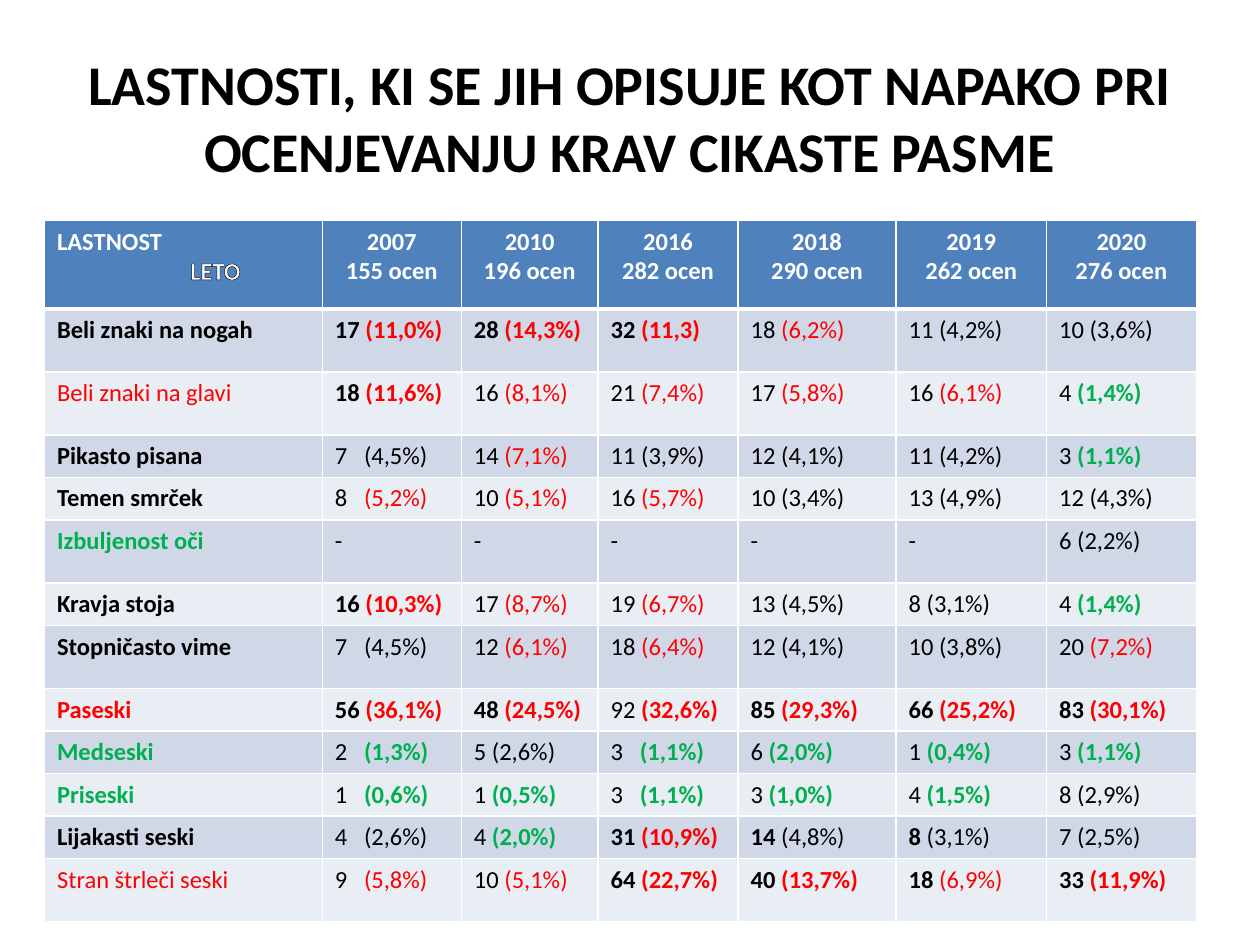
from lxml import etree
from pptx import Presentation
from pptx import util as u
from pptx.dml.color import RGBColor
from pptx.enum import text
from pptx.oxml import ns

Pt = u.Pt

WHITE = RGBColor(0xFF, 0xFF, 0xFF)
BLACK = RGBColor(0x00, 0x00, 0x00)
RED = RGBColor(0xFF, 0x00, 0x00)
GREEN = RGBColor(0x00, 0xB0, 0x50)
HEADER = RGBColor(0x4F, 0x81, 0xBD)
BANDS = (RGBColor(0xD0, 0xD8, 0xE8), RGBColor(0xE9, 0xED, 0xF4))

# First letter of a run: k black, r red, g green; a capital is bold
COLOURS = {"k": BLACK, "r": RED, "g": GREEN}

TITLE = "LASTNOSTI, KI SE JIH OPISUJE KOT NAPAKO PRI OCENJEVANJU KRAV CIKASTE PASME"
YEARS = {2007: 155, 2010: 196, 2016: 282, 2018: 290, 2019: 262, 2020: 276}
COLUMN_WIDTHS = (158.8, 79.4, 78.2, 80, 90.3, 86, 85.6)
HEADER_HEIGHT, TALL, SHORT = 50.5, 36, 24.3
COUNT_TAB = 16.6
LETO_INDENT = 76

TRAITS = [
    (TALL, ["KBeli znaki na nogah", "K17 |R(11,0%)", "K28 |R(14,3%)", "K32 |R(11,3)",
            "k18 |r(6,2%)", "k11 (4,2%)", "k10 (3,6%)"]),
    (TALL, ["rBeli znaki na glavi", "K18 |R(11,6%)", "k16 |r(8,1%)", "k21 |r(7,4%)",
            "k17 |r(5,8%)", "k16 |r(6,1%)", "k4|G (1,4%)"]),
    (SHORT, ["KPikasto pisana", "k7\t(4,5%)", "k14 |r(7,1%)", "k11 (3,9%)",
             "k12 (4,1%)", "k11 (4,2%)", "k3|G (1,1%)"]),
    (SHORT, ["KTemen smrček", "k8\t|r(5,2%)", "k10 |r(5,1%)", "k16 |r(5,7%)",
             "k10 (3,4%)", "k13 (4,9%)", "k12 (4,3%)"]),
    (TALL, ["GIzbuljenost oči", *["k-"] * 5, "k6 (2,2%)"]),
    (SHORT, ["KKravja stoja", "K16 |R(10,3%)", "k17 |r(8,7%)", "k19 |r(6,7%)",
             "k13 (4,5%)", "k8 (3,1%)", "k4 |G(1,4%)"]),
    (TALL, ["KStopničasto vime", "k7\t(4,5%)", "k12 |r(6,1%)", "k18 |r(6,4%)",
            "k12 (4,1%)", "k10 (3,8%)", "k20 |r(7,2%)"]),
    (SHORT, ["RPaseski", "K56 |R(36,1%)", "K48 |R(24,5%)", "k92 |R(32,6%)",
             "K85|R (29,3%)", "K66|R (25,2%)", "K83|R (30,1%)"]),
    (SHORT, ["GMedseski", "k2\t|G(1,3%)", "k5 (2,6%)", "k3\t|G(1,1%)",
             "k6|G (2,0%)", "k1|G (0,4%)", "k3|G (1,1%)"]),
    (SHORT, ["GPriseski", "k1\t|G(0,6%)", "k1 |G(0,5%)", "k3\t|G(1,1%)",
             "k3 |G(1,0%)", "k4 |G(1,5%)", "k8 (2,9%)"]),
    (SHORT, ["KLijakasti seski", "k4\t(2,6%)", "k4 |G(2,0%)", "K31 |R(10,9%)",
             "K14|k (4,8%)", "K8|k (3,1%)", "k7 (2,5%)"]),
    (TALL, ["rStran štrleči seski", "k9\t|r(5,8%)", "k10 |r(5,1%)", "K64 |R(22,7%)",
            "K40|R (13,7%)", "K18 |r(6,9%)", "K33 |R(11,9%)"]),
]


class SlideWriter:
    font = "Calibri"
    title_size = 32
    cell_size = 14

    def __init__(self, slide):
        self.slide = slide

    def run(self, paragraph, words, size, colour, bold):
        run = paragraph.add_run()
        run.text = words
        run.font.name = self.font
        run.font.size = Pt(size)
        run.font.bold = bold
        run.font.color.rgb = colour
        return run

    def title(self, words, left, top, width, height):
        frame = self.slide.shapes.add_textbox(Pt(left), Pt(top), Pt(width), Pt(height)).text_frame
        frame.word_wrap = True
        frame.vertical_anchor = text.MSO_ANCHOR.MIDDLE
        paragraph = frame.paragraphs[0]
        paragraph.alignment = text.PP_ALIGN.CENTER
        self.run(paragraph, words, self.title_size, BLACK, True)

    def table(self, left, top, widths, heights):
        table = self.slide.shapes.add_table(
            len(heights), len(widths), Pt(left), Pt(top), Pt(sum(widths)), Pt(sum(heights))).table
        for column, width in zip(table.columns, widths):
            column.width = Pt(width)
        for row, height in zip(table.rows, heights):
            row.height = Pt(height)
        return table

    def line(self, parent, tag, width, colour):
        line = etree.SubElement(parent, ns.qn(tag), w=str(Pt(width)))
        fill = etree.SubElement(line, ns.qn("a:solidFill"))
        etree.SubElement(fill, ns.qn("a:srgbClr"), val=str(colour))
        return line

    def cell_box(self, cell, fill, top=1, bottom=1):
        properties = cell._tc.get_or_add_tcPr()
        for side, width in (("L", 1), ("R", 1), ("T", top), ("B", bottom)):
            self.line(properties, "a:ln" + side, width, WHITE)
        cell.fill.solid()
        cell.fill.fore_color.rgb = fill

    def header_cell(self, cell, lines, alignment):
        self.cell_box(cell, HEADER, bottom=3)
        frame = cell.text_frame
        for index, words in enumerate(lines):
            paragraph = frame.add_paragraph() if index else frame.paragraphs[0]
            paragraph.alignment = alignment
            self.run(paragraph, words, self.cell_size, WHITE, True)
        return frame.paragraphs

    def outline(self, run):
        properties = run.font._element
        properties.insert(0, self.line(properties, "a:ln", 0.75, BLACK))

    def trait_cell(self, cell, coded, fill, top):
        self.cell_box(cell, fill, top=top)
        paragraph = cell.text_frame.paragraphs[0]
        if "\t" in coded:
            tabs = etree.SubElement(paragraph._p.get_or_add_pPr(), ns.qn("a:tabLst"))
            etree.SubElement(tabs, ns.qn("a:tab"), pos=str(Pt(COUNT_TAB)), algn="l")
        for part in coded.split("|"):
            style, words = part[0], part[1:]
            self.run(paragraph, words, self.cell_size, COLOURS[style.lower()], style.isupper())


def main():
    deck = Presentation()
    deck.slide_width, deck.slide_height = Pt(720), Pt(540)
    writer = SlideWriter(deck.slides.add_slide(deck.slide_layouts[6]))

    # Title
    writer.title(TITLE, 36, 21.6, 648, 90)

    # Table header: trait against year and number of assessments
    heights = [HEADER_HEIGHT] + [height for height, _ in TRAITS]
    table = writer.table(25.4, 126, COLUMN_WIDTHS, heights)
    corner = writer.header_cell(table.cell(0, 0), ["LASTNOST", "LETO"], text.PP_ALIGN.LEFT)
    corner[1]._p.get_or_add_pPr().set("marL", str(Pt(LETO_INDENT)))
    writer.outline(corner[1].runs[0])
    for column, (year, count) in enumerate(YEARS.items(), 1):
        writer.header_cell(table.cell(0, column), [str(year), f"{count} ocen"],
                           text.PP_ALIGN.CENTER)

    # Table body: one banded row per trait
    for row, (_, cells) in enumerate(TRAITS, 1):
        for column, coded in enumerate(cells):
            writer.trait_cell(table.cell(row, column), coded, BANDS[(row - 1) % 2],
                              top=3 if row == 1 else 1)

    deck.save("out.pptx")


if __name__ == "__main__":
    main()
